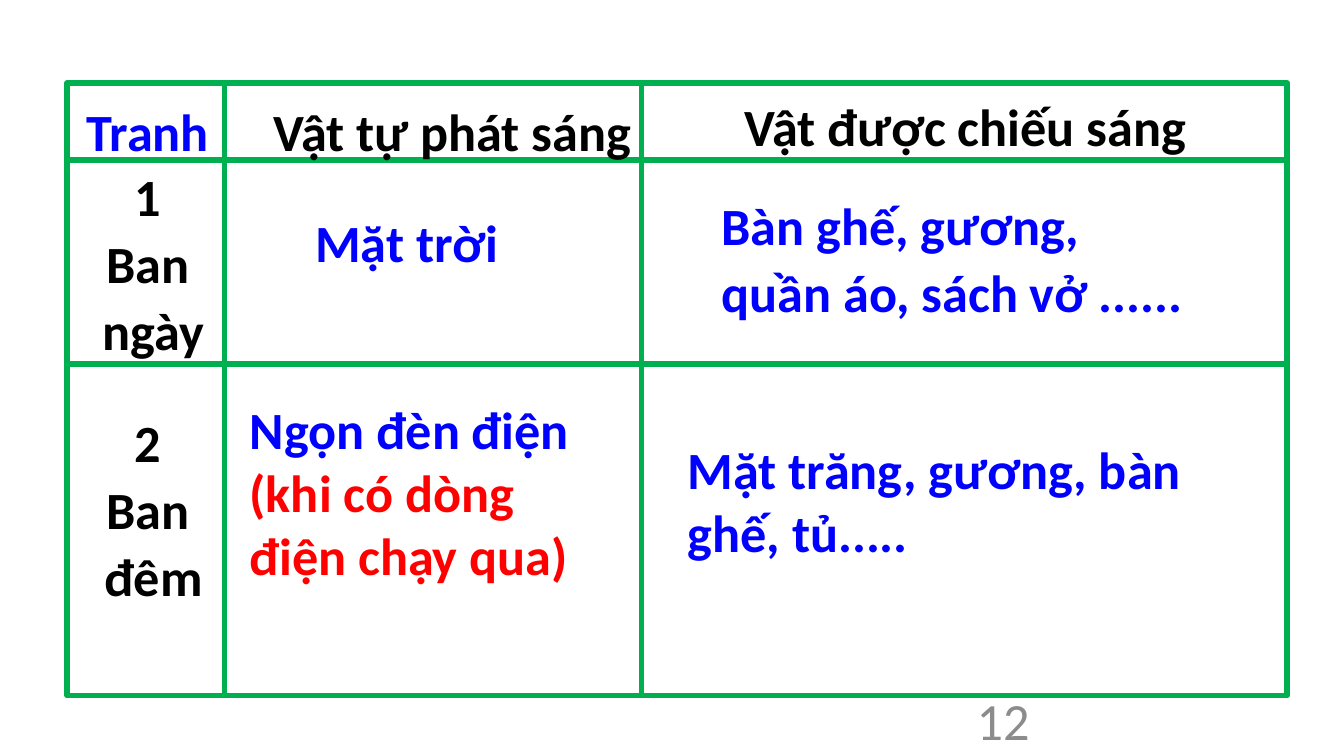
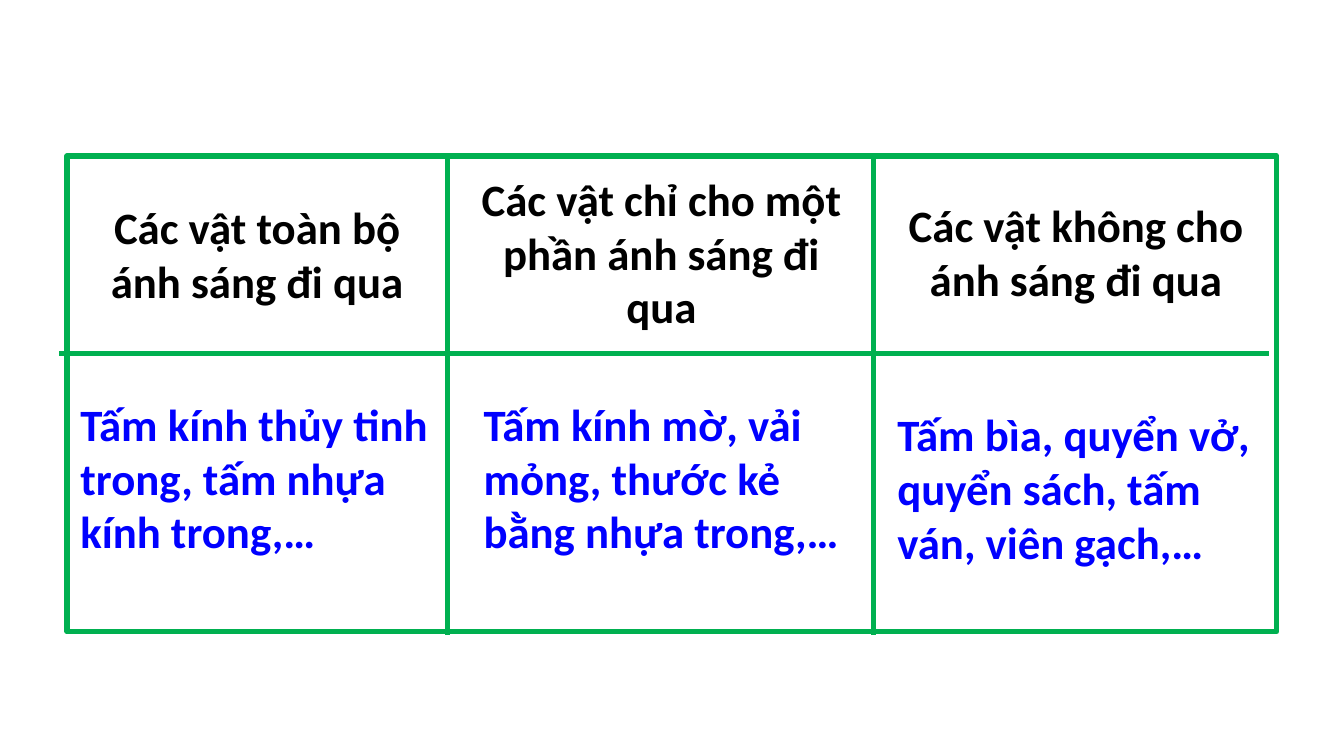
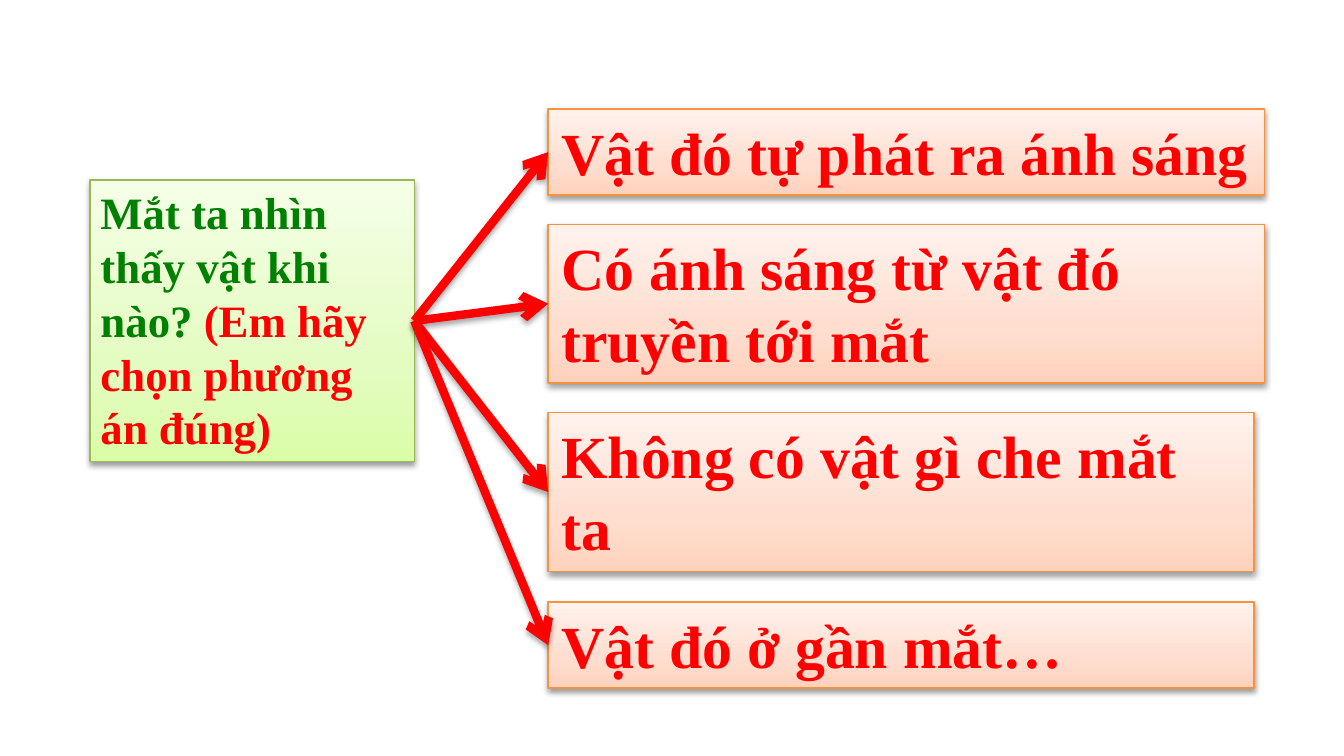
from copy import deepcopy

from pptx import Presentation
from pptx.dml.color import RGBColor
from pptx.enum.shapes import MSO_CONNECTOR, MSO_SHAPE
from pptx.enum.text import MSO_ANCHOR, MSO_AUTO_SIZE, PP_ALIGN
from pptx.oxml.ns import qn
from pptx.util import Cm, Pt
from lxml.etree import SubElement

BLACK = RGBColor(0x00, 0x00, 0x00)
WHITE = RGBColor(0xFF, 0xFF, 0xFF)
GRAY = RGBColor(0x8C, 0x8C, 0x8C)
BLUE = RGBColor(0x00, 0x00, 0xFF)
RED = RGBColor(0xFF, 0x00, 0x00)
DARK_GREEN = RGBColor(0x00, 0x80, 0x00)
GRID_GREEN = RGBColor(0x00, 0xB0, 0x50)
QUESTION_LINE = RGBColor(0x98, 0xB9, 0x55)
ANSWER_LINE = RGBColor(0xF6, 0x92, 0x40)
QUESTION_GRADIENT = (RGBColor(0xDA, 0xFD, 0xA7), RGBColor(0xE4, 0xFC, 0xC2),
                     RGBColor(0xF5, 0xFF, 0xE7))
ANSWER_GRADIENT = (RGBColor(0xFF, 0xD2, 0xBD), RGBColor(0xFF, 0xDE, 0xD0),
                   RGBColor(0xFF, 0xF2, 0xED))
GRADIENT_POSITIONS = (0, 0.35, 1)
GRID_FONT = "Calibri"
DIAGRAM_FONT = "Times New Roman"


def write_text(frame, paragraphs, size=28, font=GRID_FONT, color=BLACK, bold=True,
               align=PP_ALIGN.LEFT, anchor=MSO_ANCHOR.TOP, wrap=True, grow=True,
               level=0, line_spacing=None, space_before=None):
    """Fill a frame with paragraphs, each a string or a list of (text, color) pairs."""
    frame.word_wrap = wrap
    frame.vertical_anchor = anchor
    frame.auto_size = MSO_AUTO_SIZE.SHAPE_TO_FIT_TEXT if grow else MSO_AUTO_SIZE.NONE
    for index, content in enumerate(paragraphs):
        paragraph = frame.add_paragraph() if index else frame.paragraphs[0]
        paragraph.alignment = align
        paragraph.level = level
        paragraph.line_spacing = line_spacing
        if index:
            paragraph.space_before = space_before
        pieces = [(content, color)] if isinstance(content, str) else content
        for text, run_color in pieces:
            run = paragraph.add_run()
            run.text = text
            run.font.size = Pt(size)
            run.font.name = font
            run.font.bold = bold
            run.font.color.rgb = run_color


def add_text(slide, box, *paragraphs, **text_format):
    """Add a text box at a (left, top, width, height) in centimetres."""
    shape = slide.shapes.add_textbox(*map(Cm, box))
    write_text(shape.text_frame, paragraphs, **text_format)


def add_rectangle(slide, box, line_color, line_width):
    """Add an outlined rectangle without a shadow."""
    shape = slide.shapes.add_shape(MSO_SHAPE.RECTANGLE, *map(Cm, box))
    shape.shadow.inherit = False
    shape.line.color.rgb = line_color
    shape.line.width = Pt(line_width)
    return shape


def add_line(slide, start, end, color, width):
    """Add a straight connector without a shadow."""
    connector = slide.shapes.add_connector(
        MSO_CONNECTOR.STRAIGHT, *map(Cm, start + end))
    connector.line.color.rgb = color
    connector.line.width = Pt(width)
    SubElement(connector._element.spPr, qn("a:effectLst"))
    return connector


def add_shadow(shape, distance, opacity):
    """Put a soft shadow straight below a shape or connector."""
    effects = shape._element.spPr.find(qn("a:effectLst"))
    shadow = SubElement(effects, qn("a:outerShdw"), blurRad=str(Pt(3.1)),
                        dist=str(Pt(distance)), dir="5400000", rotWithShape="0")
    color = SubElement(shadow, qn("a:srgbClr"), val=str(BLACK))
    SubElement(color, qn("a:alpha"), val=str(opacity * 1000))


def fill_gradient(shape, colors):
    """Fill a shape with a three-stop gradient that rises from the bottom."""
    shape.fill.gradient()
    shape.fill.gradient_angle = 90
    stop_list = shape._element.spPr.find(qn("a:gradFill")).find(qn("a:gsLst"))
    stop_list.append(deepcopy(stop_list[0]))
    for stop, color, position in zip(shape.fill.gradient_stops, colors, GRADIENT_POSITIONS):
        stop.color.rgb = color
        stop.position = position


def add_grid(slide, box, columns, rows, overhang=(0, 0), shift=0):
    """Draw a green frame with vertical lines at columns and horizontal lines at rows."""
    left, top, width, height = box
    frame = add_rectangle(slide, box, GRID_GREEN, 3)
    frame.fill.solid()
    frame.fill.fore_color.rgb = WHITE
    above, below = overhang
    for x in columns:
        add_line(slide, (x, top - above), (x, top + height + below), GRID_GREEN, 3)
    for y in rows:
        add_line(slide, (left + shift, y), (left + width + shift, y), GRID_GREEN, 3)


def add_card(slide, box, paragraph, gradient, line_color, size, margins=None):
    """Add a shaded card of the diagram."""
    card = add_rectangle(slide, box, line_color, 0.75)
    fill_gradient(card, gradient)
    add_shadow(card, 1.6, 38)
    frame = card.text_frame
    if margins:
        frame.margin_left = frame.margin_right = Cm(margins[0])
        frame.margin_top = frame.margin_bottom = Cm(margins[1])
    write_text(frame, [paragraph], size=size, font=DIAGRAM_FONT, color=RED)
    return card


def add_arrow(slide, source, target):
    """Join the right side of one card to the left side of another."""
    arrow = add_line(slide, (0, 0), (1, 1), RED, 4.5)
    arrow.begin_connect(source, 3)
    arrow.end_connect(target, 1)
    SubElement(arrow.line._get_or_add_ln(), qn("a:tailEnd"), type="arrow")
    add_shadow(arrow, 1.8, 35)


def build_light_sources(slide):
    """Build the table of things that shine and things that are lit."""
    add_text(slide, (18.21, 13.23, 5.92, 0.76), "12", color=GRAY, bold=False,
             anchor=MSO_ANCHOR.MIDDLE, grow=False)
    add_grid(slide, (1.27, 1.57, 23.06, 11.58), (4.24, 12.12), (3.02, 6.88))
    headings = (
        ((1.37, 1.75, 3.07, 1.45), "Tranh ", BLUE),
        ((4.88, 1.75, 7.34, 1.45), "Vật tự phát sáng", BLACK),
        ((13.77, 1.65, 8.94, 1.45), "Vật được chiếu sáng", BLACK),
    )
    for box, text, color in headings:
        add_text(slide, box, text, color=color, align=PP_ALIGN.CENTER, wrap=False)
    spacing = {"line_spacing": 0.9, "space_before": Pt(5.6)}
    for top, lines in ((3.12, ("1", "Ban", " ngày")), (7.77, ("2", "Ban", " đêm"))):
        add_text(slide, (1.47, top, 2.64, 3.96), *lines,
                 align=PP_ALIGN.CENTER, wrap=False, **spacing)
    add_text(slide, (4.44, 3.99, 5.31, 1.35), "Mặt trời",
             color=BLUE, wrap=False, level=1, **spacing)
    add_text(slide, (12.12, 3.66, 11.4, 2.64), "Bàn ghế, gương,",
             "quần áo, sách vở ......", color=BLUE, level=1, **spacing)
    add_text(slide, (12.75, 8.15, 10.8, 2.64), "Mặt trăng, gương, bàn ghế, tủ.....",
             color=BLUE)
    add_text(slide, (4.47, 7.39, 7.42, 3.84),
             [("Ngọn đèn điện ", BLUE), ("(khi có dòng điện chạy qua)", RED)])


def build_transparency(slide):
    """Build the table of materials by how much light they let through."""
    add_grid(slide, (1.27, 2.95, 22.86, 8.99), (8.46, 16.51), (6.68,),
             overhang=(0.03, 0.07), shift=-0.15)
    headings = (
        ((1.47, 3.66, 6.78, 2.31), "Các vật toàn bộ ánh sáng đi qua"),
        ((8.69, 3.12, 7.62, 3.33), "Các vật chỉ cho một phần ánh sáng đi qua"),
        ((16.84, 3.61, 6.99, 2.31), "Các vật không cho ánh sáng đi qua"),
    )
    examples = (
        ((1.27, 7.37, 7.09, 3.33), "Tấm kính thủy tinh trong, tấm nhựa kính trong,…"),
        ((8.89, 7.37, 7.42, 3.33), "Tấm kính mờ, vải mỏng, thước kẻ bằng nhựa trong,…"),
        ((16.71, 7.57, 7.19, 3.33), "Tấm bìa, quyển vở, quyển sách, tấm ván, viên gạch,…"),
    )
    for box, text in headings:
        add_text(slide, box, text, size=24, align=PP_ALIGN.CENTER)
    for box, text in examples:
        add_text(slide, box, text, size=24, color=BLUE)


def build_question(slide):
    """Build the question card with arrows to its four answers."""
    question = add_card(
        slide, (1.7, 3.4, 6.13, 5.33),
        [("Mắt ta nhìn thấy vật khi nào? ", DARK_GREEN),
         ("(Em hãy chọn phương án đúng)", RED)],
        QUESTION_GRADIENT, QUESTION_LINE, 24, margins=(0.2, 0.1))
    answers = (
        (2.06, 13.54, 1.63, "Vật đó tự phát ra ánh sáng"),
        (4.24, 13.54, 3, "Có ánh sáng từ vật đó truyền tới mắt"),
        (7.8, 13.34, 3, "Không có vật gì che mắt ta"),
        (11.38, 13.34, 1.63, "Vật đó ở gần mắt…"),
    )
    for top, width, height, text in answers:
        answer = add_card(slide, (10.36, top, width, height), text,
                          ANSWER_GRADIENT, ANSWER_LINE, 32)
        add_arrow(slide, question, answer)


def main():
    """Build the three slides and save them."""
    presentation = Presentation()
    presentation.slide_width = Cm(25.4)
    presentation.slide_height = Cm(14.29)
    blank_layout = presentation.slide_layouts[6]
    for build in (build_light_sources, build_transparency, build_question):
        build(presentation.slides.add_slide(blank_layout))
    presentation.save("out.pptx")


if __name__ == "__main__":
    main()
